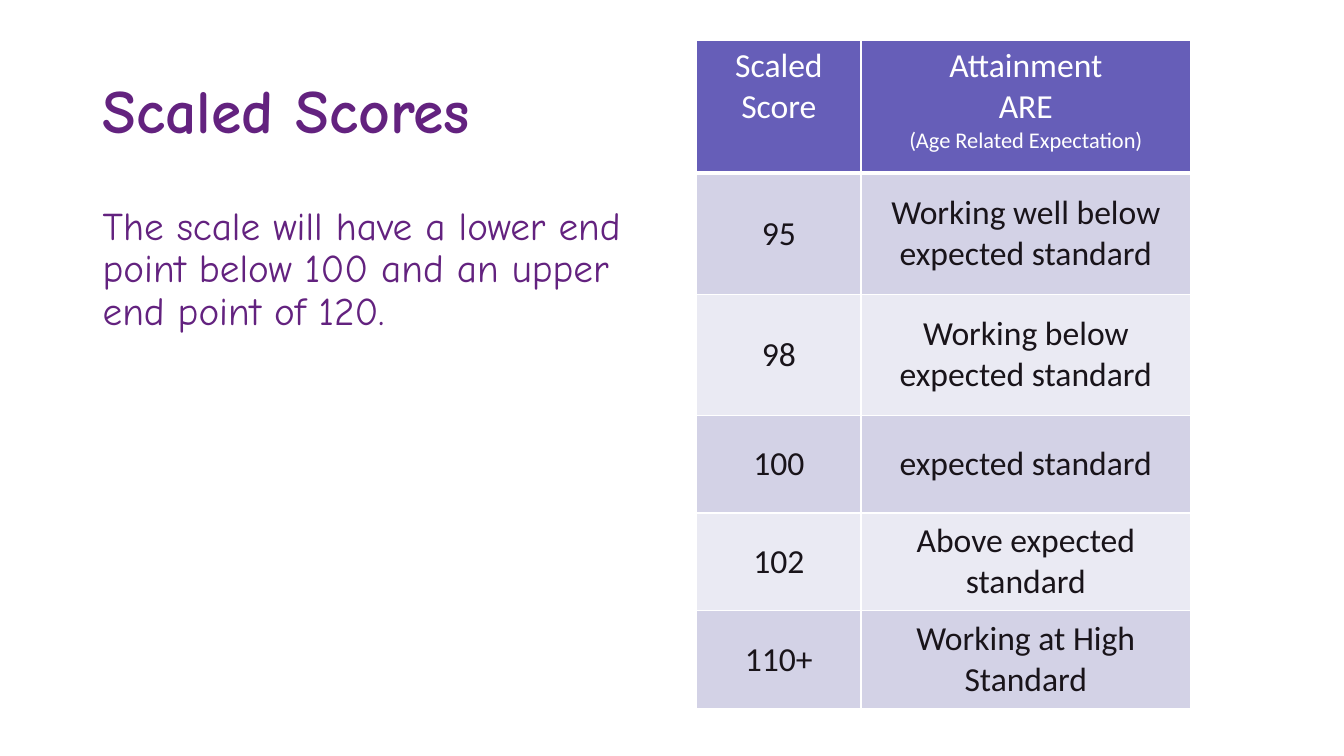
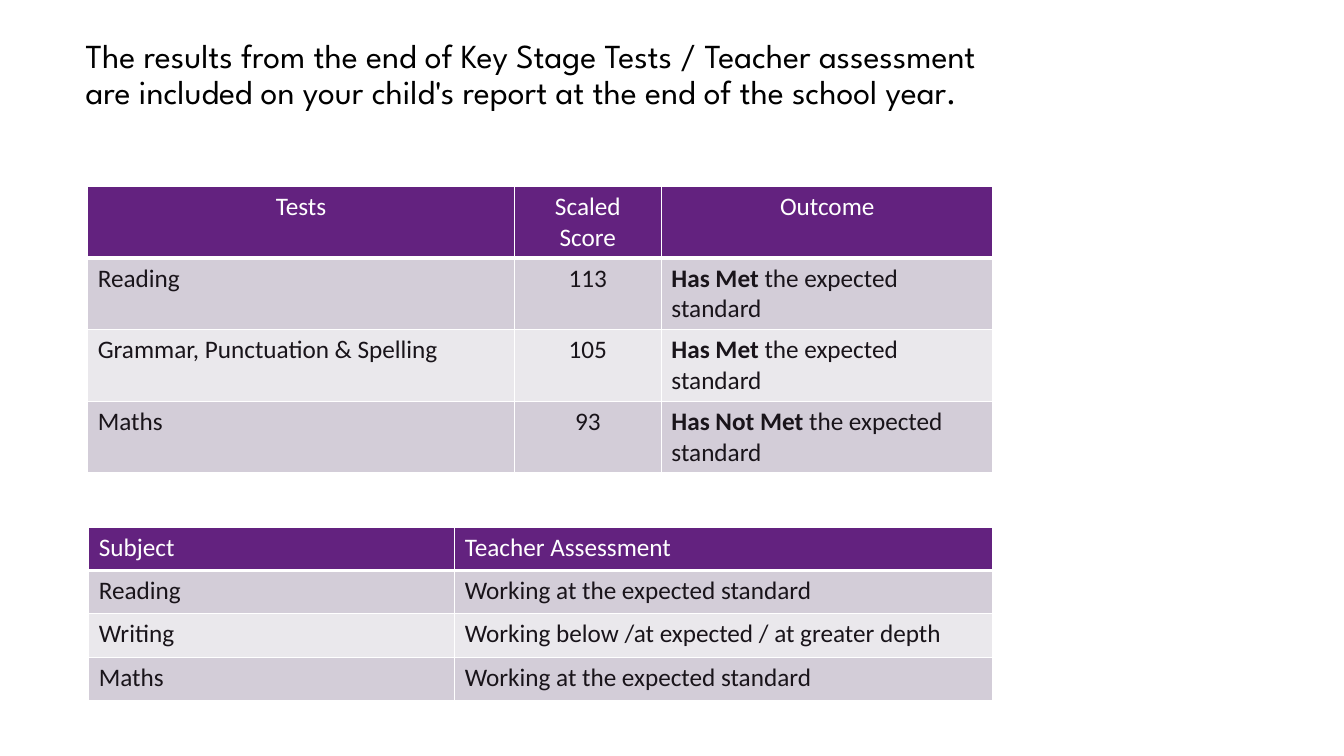
"""Build two slides that explain scaled scores and reported test results."""
from dataclasses import dataclass
from typing import Optional, Union

from lxml.etree import SubElement
from pptx import Presentation
from pptx.dml.color import RGBColor
from pptx.enum.text import MSO_ANCHOR as Anchor, MSO_AUTO_SIZE as AutoSize, PP_ALIGN as Align
from pptx.oxml.ns import qn
from pptx.util import Emu, Pt

PX = 9144
TITLE_ONLY = 5

WHITE = RGBColor(0xFF, 0xFF, 0xFF)
BLACK = RGBColor(0x00, 0x00, 0x00)
INK = RGBColor(0x19, 0x14, 0x1A)
PURPLE = RGBColor(0x63, 0x22, 0x7F)
VIOLET = RGBColor(0x66, 0x5E, 0xB8)
VIOLET_MID = RGBColor(0xD3, 0xD2, 0xE6)
VIOLET_PALE = RGBColor(0xEA, 0xEA, 0xF3)
MAUVE_MID = RGBColor(0xD3, 0xCD, 0xD8)
MAUVE_PALE = RGBColor(0xEA, 0xE8, 0xEC)

HAND_FONT = "Comic Neue"
HEADING_FONT = "League Spartan"
TABLE_FONT = "Calibri"


@dataclass(frozen=True)
class Run:
    """A stretch of text that may differ from its surroundings."""
    text: str
    bold: bool = False
    size: Optional[int] = None


Paragraph = Union[str, tuple[Run, ...]]
Content = Union[str, list[Paragraph]]


@dataclass(frozen=True)
class Box:
    """A place on the slide in px."""
    left: int
    top: int
    width: int
    height: int

    def emu(self) -> tuple[Emu, ...]:
        """Return the place in EMU."""
        return tuple(px(v) for v in (self.left, self.top, self.width, self.height))


@dataclass(frozen=True)
class Theme:
    """The fills of a table."""
    header: RGBColor
    bands: tuple[RGBColor, RGBColor]


@dataclass(frozen=True)
class Grid:
    """A table with its header in the first row."""
    left: int
    top: int
    columns: tuple[int, ...]
    heights: tuple[int, ...]
    rows: list[tuple[Content, ...]]
    theme: Theme
    size: int
    header_align: Align
    aligns: tuple[Align, ...]
    anchor: Anchor = Anchor.TOP


VIOLET_THEME = Theme(VIOLET, (VIOLET_MID, VIOLET_PALE))
PURPLE_THEME = Theme(PURPLE, (MAUVE_MID, MAUVE_PALE))

SCALE = Grid(
    691, 40, (163, 327), (132, 120, 120, 97, 97, 97),
    [
        ("Scaled Score", ["Attainment", "ARE", (Run("(Age Related Expectation)", size=16),)]),
        ("95", "Working well below expected standard"),
        ("98", "Working below expected standard"),
        ("100", "expected standard"),
        ("102", "Above expected standard"),
        ("110+", "Working at High Standard"),
    ],
    VIOLET_THEME, 24, Align.CENTER, (Align.CENTER, Align.CENTER), Anchor.MIDDLE,
)
MET: Content = [(Run("Has Met", bold=True), Run(" the expected standard"))]
NOT_MET: Content = [(Run("Has Not Met ", bold=True), Run("the expected standard"))]
TESTS = Grid(
    87, 185, (423, 146, 329), (70,) * 4,
    [
        ("Tests", "Scaled Score", "Outcome"),
        ("Reading", "113", MET),
        ("Grammar, Punctuation & Spelling", "105", MET),
        ("Maths", "93", NOT_MET),
    ],
    PURPLE_THEME, 18, Align.CENTER, (Align.LEFT, Align.CENTER, Align.LEFT),
)
ASSESSMENT = Grid(
    88, 523, (363, 533), (43,) * 4,
    [
        ("Subject", "Teacher Assessment"),
        ("Reading", "Working at the expected standard"),
        ("Writing", "Working below /at expected / at greater depth"),
        ("Maths", "Working at the expected standard"),
    ],
    PURPLE_THEME, 18, Align.LEFT, (Align.LEFT, Align.LEFT),
)


def px(length: int) -> Emu:
    """Turn px into EMU."""
    return Emu(length * PX)


def write(frame, content: Content, *, size: int, font: str, color: RGBColor,
          bold: bool = False, align: Align = Align.LEFT,
          anchor: Anchor = Anchor.TOP, spacing: float = 1.0) -> None:
    """Fill a text frame with formatted paragraphs."""
    frame.word_wrap = True
    frame.vertical_anchor = anchor
    paragraphs = [content] if isinstance(content, str) else content
    for index, runs in enumerate(paragraphs):
        paragraph = frame.add_paragraph() if index else frame.paragraphs[0]
        paragraph.alignment = align
        paragraph.line_spacing = spacing
        for part in (Run(runs, bold),) if isinstance(runs, str) else runs:
            run = paragraph.add_run()
            run.text = part.text
            run.font.name = font
            run.font.size = Pt(part.size or size)
            run.font.bold = part.bold
            run.font.color.rgb = color


def add_borders(cell, bottom: int) -> None:
    """Give a cell white borders, 1 pt wide except for the bottom one."""
    properties = cell._tc.get_or_add_tcPr()
    for side, width in (("lnL", 1), ("lnR", 1), ("lnT", 1), ("lnB", bottom)):
        line = SubElement(properties, qn(f"a:{side}"), w=str(Pt(width)))
        fill = SubElement(line, qn("a:solidFill"))
        SubElement(fill, qn("a:srgbClr"), val=str(WHITE))


def add_grid(slide, grid: Grid) -> None:
    """Draw a table with a header and banded rows."""
    place = Box(grid.left, grid.top, sum(grid.columns), sum(grid.heights))
    table = slide.shapes.add_table(len(grid.rows), len(grid.columns), *place.emu()).table
    for column, width in zip(table.columns, grid.columns):
        column.width = px(width)
    for r, (row, height) in enumerate(zip(grid.rows, grid.heights)):
        table.rows[r].height = px(height)
        header = r == 0
        for c, content in enumerate(row):
            cell = table.cell(r, c)
            add_borders(cell, bottom=3 if header else 1)
            cell.fill.solid()
            cell.fill.fore_color.rgb = grid.theme.header if header else grid.theme.bands[(r - 1) % 2]
            write(cell.text_frame, content, size=grid.size, font=TABLE_FONT,
                  color=WHITE if header else INK,
                  align=grid.header_align if header else grid.aligns[c])
            cell.vertical_anchor = Anchor.TOP if header else grid.anchor


def add_titled_slide(deck, title: str, place: Box, **style):
    """Add a title-only slide and format its title."""
    slide = deck.slides.add_slide(deck.slide_layouts[TITLE_ONLY])
    heading = slide.shapes.title
    heading.left, heading.top, heading.width, heading.height = place.emu()
    heading.text_frame.auto_size = AutoSize.NONE
    write(heading.text_frame, title, spacing=0.9, **style)
    return slide


def add_scale_slide(deck) -> None:
    """Explain the scale."""
    slide = add_titled_slide(deck, "Scaled Scores", Box(92, 40, 899, 145), size=44,
                             font=HAND_FONT, color=PURPLE, bold=True, anchor=Anchor.MIDDLE)
    explanation = slide.shapes.add_textbox(*Box(92, 200, 550, 476).emu())
    write(explanation.text_frame,
          "The scale will have a lower end point below 100 and an upper end point of 120.",
          size=28, font=HAND_FONT, color=PURPLE, spacing=0.9)
    add_grid(slide, SCALE)


def add_report_slide(deck) -> None:
    """Show the results in a report."""
    slide = add_titled_slide(
        deck,
        "The results from the end of Key Stage Tests / Teacher assessment are included "
        "on your child's report at the end of the school year.",
        Box(75, 34, 905, 119), size=24, font=HEADING_FONT, color=BLACK)
    for grid in (TESTS, ASSESSMENT):
        add_grid(slide, grid)


def main() -> None:
    """Build and save the deck."""
    deck = Presentation()
    deck.slide_width, deck.slide_height = px(1333), px(750)
    add_scale_slide(deck)
    add_report_slide(deck)
    deck.save("out.pptx")


if __name__ == "__main__":
    main()
